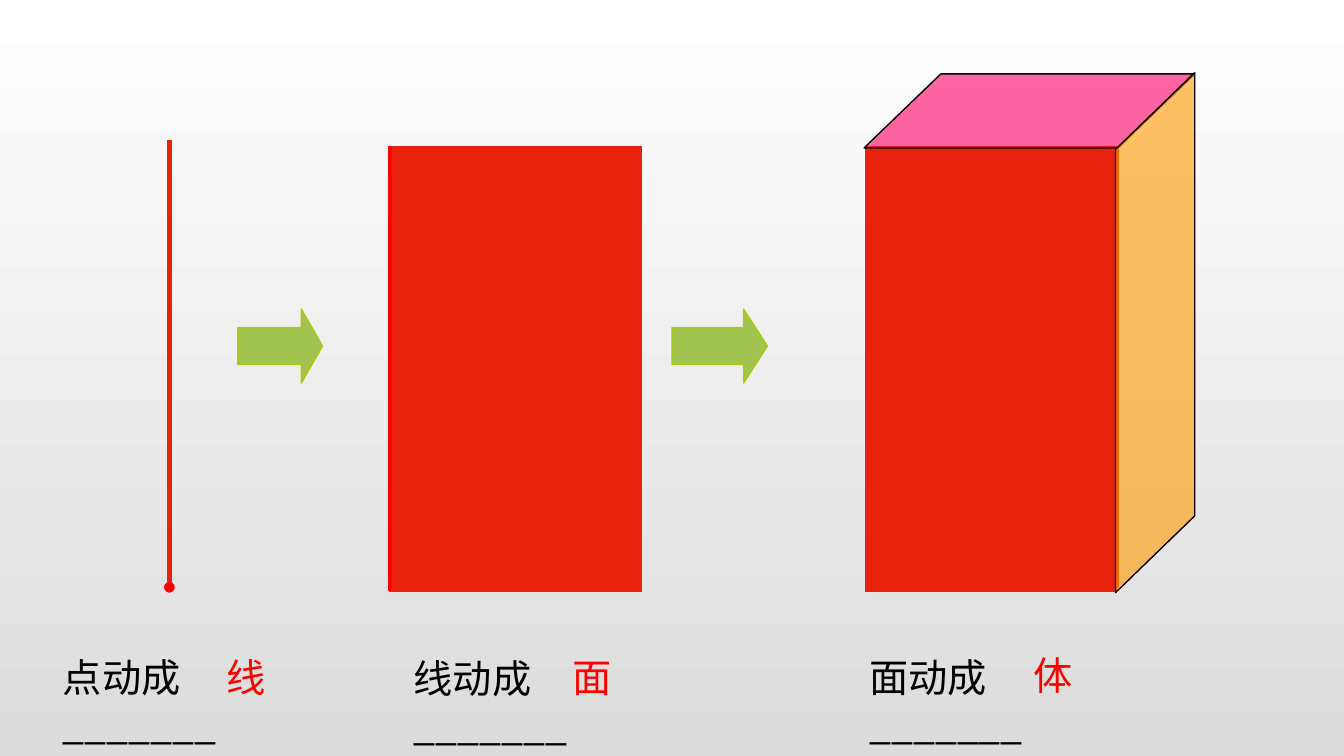
from dataclasses import dataclass

from lxml.etree import SubElement
from pptx import Presentation
from pptx.dml.color import RGBColor
from pptx.enum.shapes import MSO_CONNECTOR, MSO_SHAPE as Preset
from pptx.enum.text import MSO_ANCHOR
from pptx.oxml.ns import qn
from pptx.util import Inches, Pt

FONT = "Noto Sans CJK SC"
COLORS = {
    "white": "FFFFFF",
    "gray": "DCDCDC",
    "black": "000000",
    "red": "FF0000",
    "face": "E9220D",
    "top": "FF0066",
    "side": "FF9900",
    "arrow": "A1C450",
    "arrow_edge": "AEC80C",
}


@dataclass
class Figure:
    preset: Preset
    left: float
    top: float
    width: float
    height: float
    fill: str
    edge: str | None = None
    adjustments: tuple[float, ...] = ()
    opacity: int = 100
    rotation: int = 0
    flipped: bool = False


@dataclass
class Stroke:
    x: float
    top: float
    bottom: float
    color: str
    weight: float


@dataclass
class Caption:
    left: float
    top: float
    text: str
    answer_left: float
    answer_top: float
    answer: str


def color(name: str) -> RGBColor:
    return RGBColor.from_string(COLORS[name])


def draw_figure(page, figure: Figure) -> None:
    shape = page.shapes.add_shape(
        figure.preset,
        Inches(figure.left), Inches(figure.top),
        Inches(figure.width), Inches(figure.height),
    )
    shape.shadow.inherit = False
    shape.rotation = figure.rotation
    for index, value in enumerate(figure.adjustments):
        shape.adjustments[index] = value
    shape.fill.solid()
    shape.fill.fore_color.rgb = color(figure.fill)
    if figure.edge:
        shape.line.color.rgb = color(figure.edge)
        shape.line.width = Pt(0.75)
    else:
        shape.line.fill.background()
    properties = shape._element.spPr
    if figure.opacity < 100:
        fill_color = properties.find(qn("a:solidFill")).find(qn("a:srgbClr"))
        SubElement(fill_color, qn("a:alpha"), val=str(figure.opacity * 1000))
    if figure.flipped:
        properties.find(qn("a:xfrm")).set("flipH", "1")


def draw_stroke(page, stroke: Stroke) -> None:
    line = page.shapes.add_connector(
        MSO_CONNECTOR.STRAIGHT,
        Inches(stroke.x), Inches(stroke.top),
        Inches(stroke.x), Inches(stroke.bottom),
    )
    line.line.color.rgb = color(stroke.color)
    line.line.width = Pt(stroke.weight)
    SubElement(line._element.spPr, qn("a:effectLst"))


def draw_text(page, text: str, *, left: float, top: float, width: float,
              fill: str, size: float = 21) -> None:
    box = page.shapes.add_textbox(
        Inches(left), Inches(top), Inches(width), Inches(0.45))
    frame = box.text_frame
    frame.word_wrap = True
    frame.vertical_anchor = MSO_ANCHOR.TOP
    span = frame.paragraphs[0].add_run()
    span.text = text
    span.font.size = Pt(size)
    span.font.name = FONT
    span.font.color.rgb = color(fill)
    SubElement(span.font._element, qn("a:ea"), typeface=FONT)


def draw_caption(page, caption: Caption) -> None:
    draw_text(page, caption.text, left=caption.left,
              top=caption.top, width=2.01, fill="black")
    draw_text(page, caption.answer, left=caption.answer_left,
              top=caption.answer_top, width=0.5, fill="red")


def paint_background(page) -> None:
    fill = page.background.fill
    fill.gradient()
    fill.gradient_angle = 270
    for stop, name, position in zip(fill.gradient_stops, ("white", "gray"), (0, 1)):
        stop.color.rgb = color(name)
        stop.position = position


PRISM = [
    Figure(Preset.RECTANGLE, 6.44, 1.1, 1.87, 3.3, "face", "face"),
    Figure(Preset.RECTANGLE, 6.45, 1.09, 1.87, 3.28, "face", "face"),
    Figure(Preset.PARALLELOGRAM, 6.43, 0.55, 2.46, 0.55, "top", "black",
           (1.038,), opacity=60),
    Figure(Preset.PARALLELOGRAM, 6.66, 2.18, 3.87, 0.59, "side", "black",
           (0.969,), opacity=60, rotation=90, flipped=True),
]
ARROWS = [
    Figure(Preset.RIGHT_ARROW, 1.77, 2.3, 0.63, 0.55, "arrow", "arrow_edge", (0.5, 0.285)),
    Figure(Preset.RIGHT_ARROW, 5, 2.3, 0.71, 0.55, "arrow", "arrow_edge", (0.5, 0.321)),
]
MOVING_LINE = Stroke(1.26, 1.04, 4.35, "face", 3)
POINT = Figure(Preset.OVAL, 1.22, 4.33, 0.08, 0.08, "red")
SURFACE = Figure(Preset.RECTANGLE, 2.9, 1.09, 1.87, 3.31, "face", "face")
SURFACE_EDGE = Stroke(2.9, 1.09, 4.4, "red", 2.25)
CAPTIONS = [
    Caption(0.37, 4.81, "点动成_______", 1.59, 4.81, "线"),
    Caption(2.98, 4.82, "线动成_______", 4.16, 4.81, "面"),
    Caption(6.37, 4.81, "面动成_______", 7.59, 4.8, "体"),
]


def main() -> None:
    deck = Presentation()
    deck.slide_width = Inches(10)
    deck.slide_height = deck.slide_width * 9 // 16
    page = deck.slides.add_slide(deck.slide_layouts[6])
    paint_background(page)
    for item in [*PRISM, MOVING_LINE, *ARROWS, POINT, SURFACE, SURFACE_EDGE]:
        draw = draw_stroke if isinstance(item, Stroke) else draw_figure
        draw(page, item)
    for caption in CAPTIONS:
        draw_caption(page, caption)
    deck.save("out.pptx")


if __name__ == "__main__":
    main()
